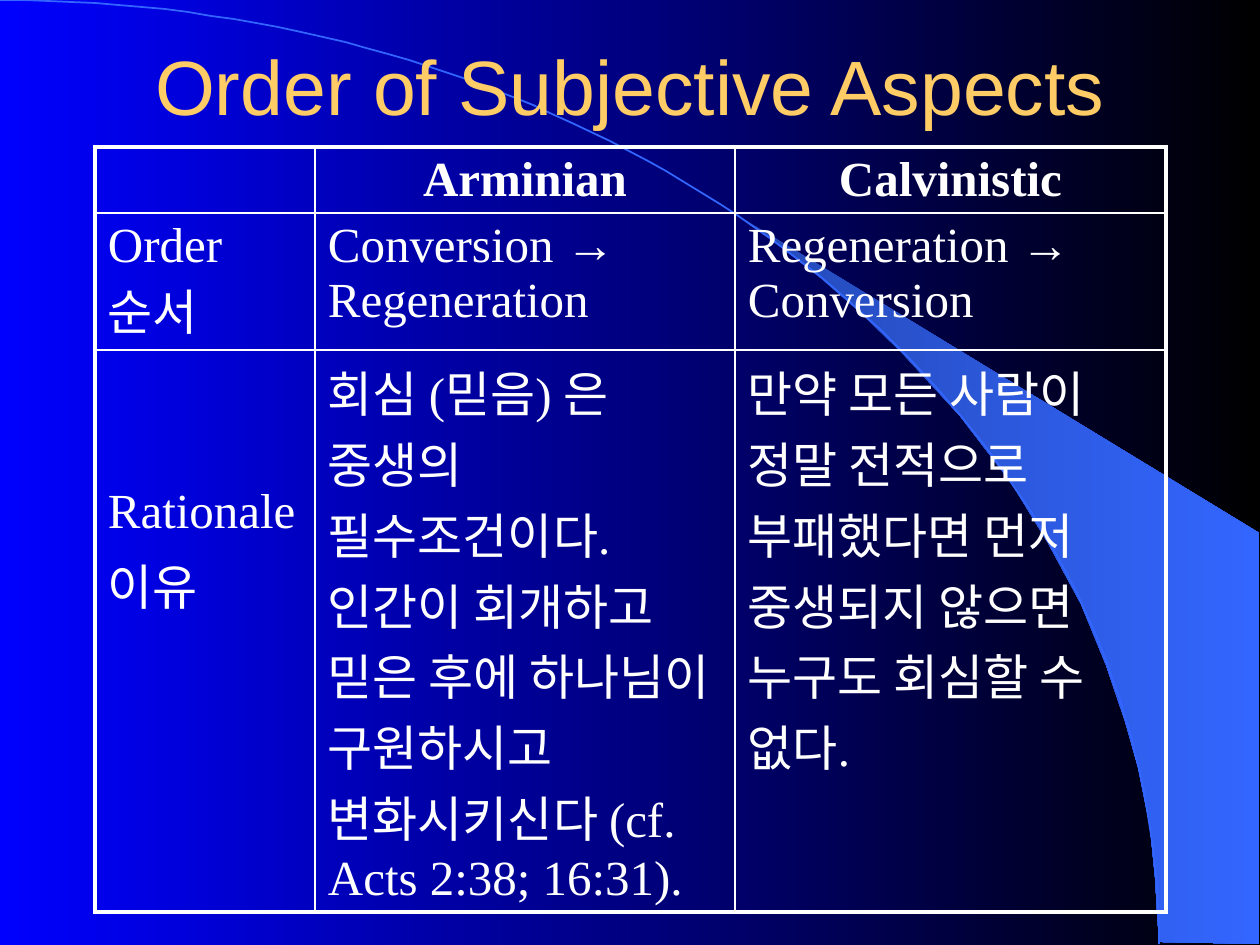
from lxml import etree
from pptx import Presentation
from pptx.dml.color import RGBColor
from pptx.enum.text import MSO_ANCHOR, PP_ALIGN
from pptx.oxml.ns import qn
from pptx.util import Pt

PX = 7257.6
CENTER, LEFT = PP_ALIGN.CENTER, PP_ALIGN.LEFT
MIDDLE = MSO_ANCHOR.MIDDLE
COLORS = {
    "blue": "0000FF", "black": "000000", "white": "FFFFFF",
    "title": "FFCC66", "arc": "3366FF", "wedge": "2449B6",
}


def px(n):
    return round(n * PX)


def set_gradient(fill, start, end):
    fill.gradient()
    fill.gradient_angle = 0
    for stop, name in zip(fill.gradient_stops, (start, end)):
        stop.color.rgb = RGBColor.from_string(COLORS[name])


prs = Presentation()
prs.slide_width, prs.slide_height = px(1260), px(945)
slide = prs.slides.add_slide(prs.slide_layouts[5])
set_gradient(slide.background.fill, "blue", "black")

title = slide.shapes.title
title.left, title.top, title.width, title.height = px(95), px(32), px(1071), px(105)
title.text_frame.text = "Order of Subjective Aspects"
title.text_frame.vertical_anchor = MIDDLE
heading = title.text_frame.paragraphs[0]
heading.alignment = CENTER
heading.font.size = Pt(44)
heading.font.name = "Arial"
heading.font.color.rgb = RGBColor.from_string(COLORS["title"])

wedge_points = [
    (1159, 942), (1259, 944), (1259, 533), (742, 218), (786, 251), (823, 280),
    (863, 315), (902, 353), (960, 416), (1012, 484), (1048, 543), (1081, 604),
    (1106, 665), (1125, 721), (1138, 767), (1150, 827), (1155, 877),
]
builder = slide.shapes.build_freeform(*wedge_points[0], scale=PX)
builder.add_line_segments(wedge_points[1:], close=True)
wedge = builder.convert_to_shape()
set_gradient(wedge.fill, "wedge", "arc")
wedge.line.fill.background()

STEPS = 80
arc_points = []
for step in range(STEPS + 1):
    t = step / STEPS
    u = 1 - t
    x = 3 * u * u * t * 640 + 3 * u * t * t * 1159 + t ** 3 * 1159
    y = 3 * u * t * t * 422 + t ** 3 * 944
    arc_points.append((x, y))
builder = slide.shapes.build_freeform(0, 0, scale=PX)
builder.add_line_segments(arc_points[1:], close=False)
arc = builder.convert_to_shape()
arc.fill.background()
arc.line.color.rgb = RGBColor.from_string(COLORS["arc"])
arc.line.width = Pt(1)

for backdrop in (wedge, arc):
    backdrop.shadow.inherit = False
    title.element.addprevious(backdrop.element)

rows = [
    [[], ["Arminian"], ["Calvinistic"]],
    [["Order 순서"], ["Conversion → Regeneration"], ["Regeneration → Conversion"]],
    [
        ["Rationale", "이유"],
        ["회심 (믿음) 은 중생의 필수조건이다. 인간이 회개하고 믿은 후에 "
         "하나님이 구원하시고 변화시키신다 (cf. Acts 2:38; 16:31)."],
        ["만약 모든 사람이 정말 전적으로 부패했다면 먼저 중생되지 않으면 "
         "누구도 회심할 수 없다."],
    ],
]
frame = slide.shapes.add_table(3, 3, px(95), px(147), px(1071), px(743))
aspects = frame.table
aspects.first_row = aspects.horz_banding = False
for column, width in zip(aspects.columns, (220, 420, 431)):
    column.width = px(width)
for row, height in zip(aspects.rows, (63, 130, 425)):
    row.height = px(height)
frame.height = px(743)

for r, row in enumerate(rows):
    for c, lines in enumerate(row):
        cell = aspects.cell(r, c)
        cell.text = "\n".join(lines)
        cell.margin_left = cell.margin_right = px(13)
        cell.margin_top = cell.margin_bottom = px(6)
        for paragraph in cell.text_frame.paragraphs:
            paragraph.alignment = CENTER if r == 0 else LEFT
            paragraph.space_before = Pt(5.6)
            paragraph.font.size = Pt(28)
            paragraph.font.name = "Times New Roman"
            paragraph.font.bold = r == 0
            paragraph.font.color.rgb = RGBColor.from_string(COLORS["white"])
        outer_edges = {"a:lnL": c == 0, "a:lnR": c == 2, "a:lnT": r == 0, "a:lnB": r == 2}
        for tag, outer in outer_edges.items():
            border = etree.SubElement(cell._tc.get_or_add_tcPr(), qn(tag))
            border.set("w", str(Pt(2.25 if outer else 1)))
            solid = etree.SubElement(border, qn("a:solidFill"))
            etree.SubElement(solid, qn("a:srgbClr")).set("val", COLORS["white"])
        cell.fill.background()
aspects.cell(2, 0).margin_top = px(135)

prs.save("out.pptx")
